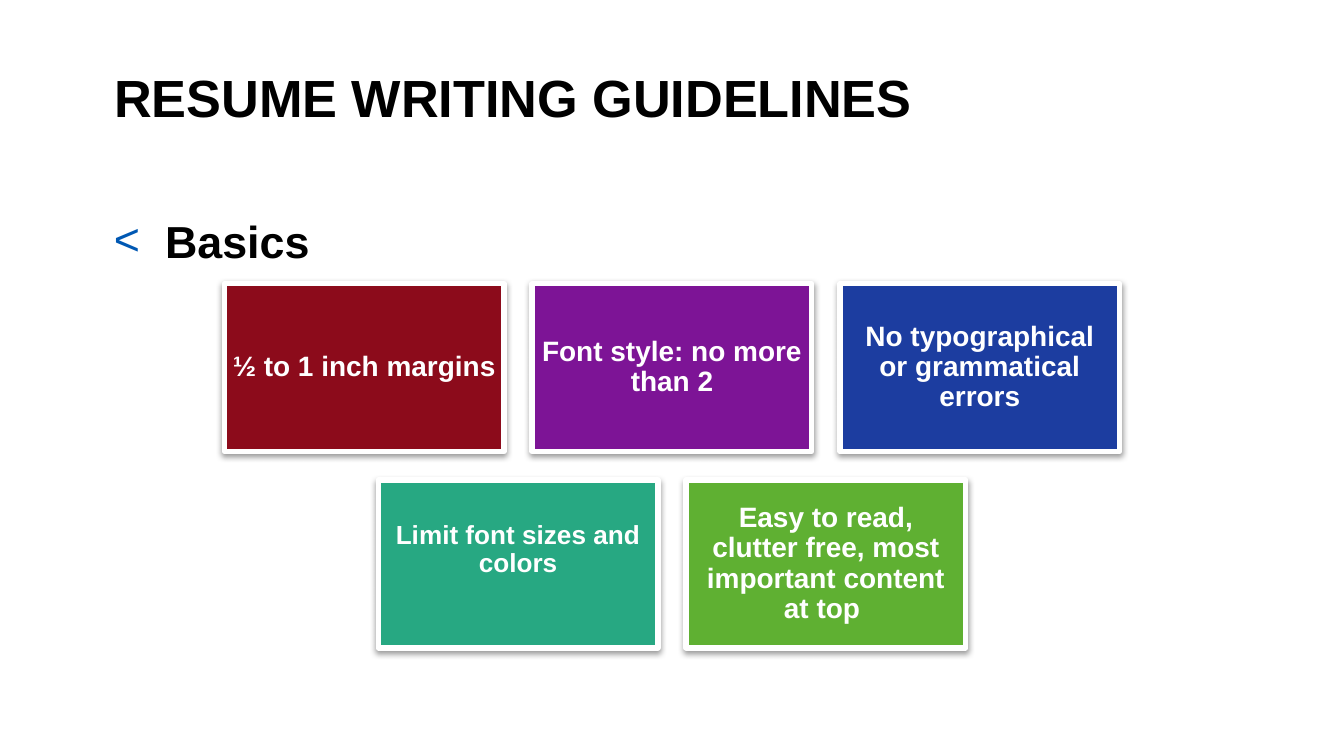
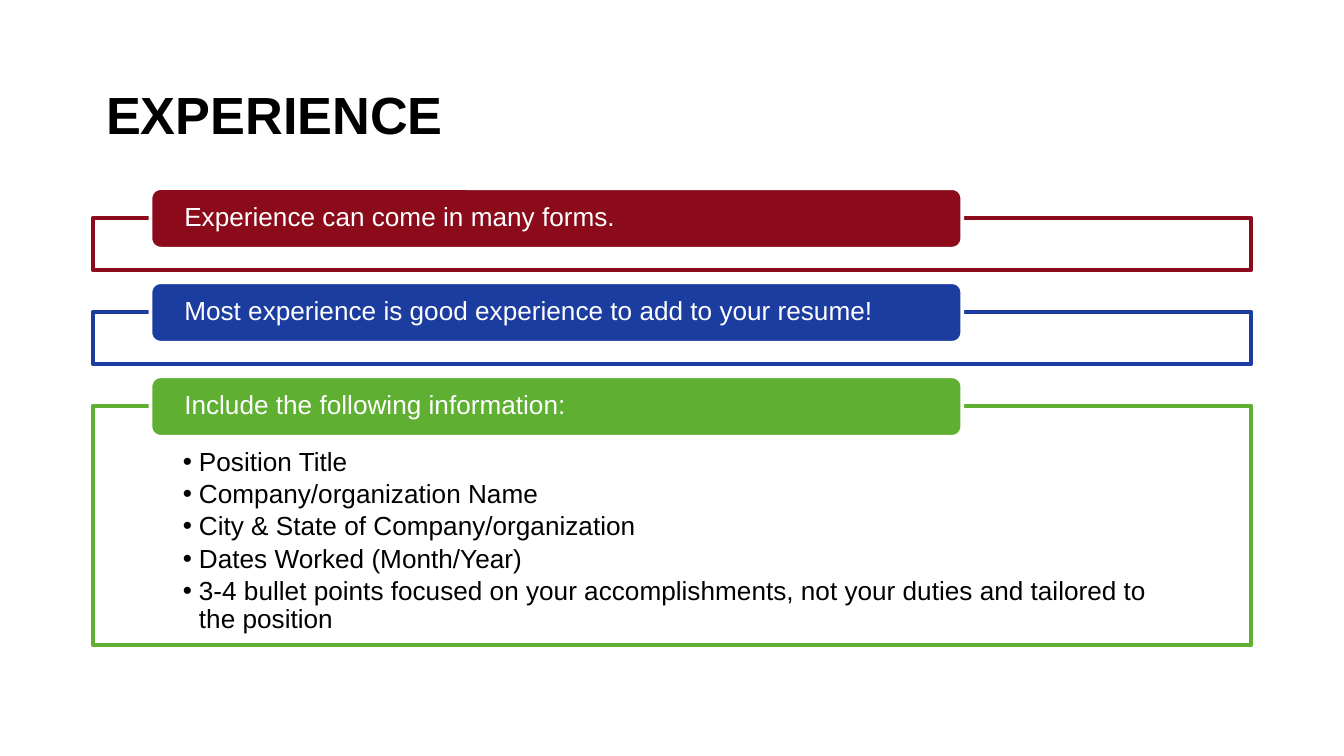
from lxml.etree import SubElement
from pptx import Presentation
from pptx.dml.color import RGBColor
from pptx.enum.shapes import MSO_SHAPE as Shape
from pptx.enum.text import MSO_ANCHOR as Anchor, MSO_AUTO_SIZE as AutoSize, PP_ALIGN as Align
from pptx.oxml.ns import qn
from pptx.util import Inches, Pt

COLORS = {
    "black": "000000", "white": "FFFFFF", "bullet": "0058B3", "red": "8C0B1B",
    "purple": "7D1496", "blue": "1C3DA0", "teal": "27A882", "green": "5FB032",
}
FONT = "Arial"


def rgb(name):
    return RGBColor.from_string(COLORS[name])


def add_bullet(paragraph, char, color, indent):
    props = paragraph._p.get_or_add_pPr()
    props.set("marL", str(Inches(indent)))
    props.set("indent", str(-Inches(indent)))
    bullet_color = SubElement(props, qn("a:buClr"))
    SubElement(bullet_color, qn("a:srgbClr"), val=COLORS[color])
    SubElement(props, qn("a:buFont"), typeface=FONT)
    SubElement(props, qn("a:buChar"), char=char)


def write(frame, *lines, size=14, color="white", bold=False, align=Align.LEFT,
          anchor=Anchor.MIDDLE, insets=(0.1, 0.05, 0.1, 0.05), spacing=0.9,
          space_before=0, bullet=None):
    """Fill a text frame with one paragraph per line; bullet is (char, color, indent)."""
    frame.word_wrap = True
    frame.auto_size = AutoSize.NONE
    frame.vertical_anchor = anchor
    (frame.margin_left, frame.margin_top,
     frame.margin_right, frame.margin_bottom) = map(Inches, insets)
    for number, line in enumerate(lines):
        paragraph = frame.add_paragraph() if number else frame.paragraphs[0]
        if bullet:
            add_bullet(paragraph, *bullet)
        paragraph.alignment = align
        paragraph.line_spacing = spacing
        paragraph.space_before = Pt(space_before if number else 0)
        run = paragraph.add_run()
        run.text = line
        run.font.name, run.font.size, run.font.bold = FONT, Pt(size), bold
        run.font.color.rgb = rgb(color)


class Deck:
    def __init__(self):
        self.prs = Presentation()
        # Widescreen, 16:9
        self.prs.slide_width = Inches(10)
        self.prs.slide_height = Inches(10 * 9 / 16)
        self.slide = None

    def add_slide(self, title, *box):
        self.slide = self.prs.slides.add_slide(self.prs.slide_layouts[5])
        heading = self.slide.shapes.title
        heading.left, heading.top, heading.width, heading.height = map(Inches, box)
        write(heading.text_frame, title, size=28, color="black", bold=True, spacing=1.0)

    def text(self, box, *lines, **style):
        frame = self.slide.shapes.add_textbox(*map(Inches, box)).text_frame
        write(frame, *lines, **style)

    def block(self, kind, box, fill, line, width):
        shape = self.slide.shapes.add_shape(kind, *map(Inches, box))
        shape.shadow.inherit = False
        shape.fill.solid()
        shape.fill.fore_color.rgb = rgb(fill)
        shape.line.color.rgb = rgb(line)
        shape.line.width = Pt(width)
        return shape

    def card(self, box, label, fill, size=15, bottom=0.06):
        card = self.block(Shape.RECTANGLE, box, fill, "white", 3)
        effects = card._element.spPr.find(qn("a:effectLst"))
        shadow = SubElement(effects, qn("a:outerShdw"), blurRad=str(Pt(3.1)),
                            dist=str(Pt(1.6)), dir="5400000", rotWithShape="0")
        shade = SubElement(shadow, qn("a:srgbClr"), val=COLORS["black"])
        SubElement(shade, qn("a:alpha"), val="38000")
        write(card.text_frame, label, size=size, bold=True, align=Align.CENTER,
              insets=(0.06, 0.06, 0.06, bottom))

    def panel(self, top, height, label, color, details=()):
        frame = self.block(Shape.RECTANGLE, (0.69, top, 8.62, height), "white", color, 2)
        fill_color = frame._element.spPr.find(qn("a:solidFill"))[0]
        SubElement(fill_color, qn("a:alpha"), val="90000")
        if details:
            write(frame.text_frame, *details, color="black", anchor=Anchor.TOP,
                  insets=(0.67, 0.32, 0.67, 0.11), space_before=2.1,
                  bullet=("•", "black", 0.12))
        tab = self.block(Shape.ROUNDED_RECTANGLE, (1.12, top - 0.22, 6.04, 0.45),
                         color, "white", 2)
        write(tab.text_frame, label, insets=(0.23, 0, 0.23, 0))


def build_guidelines(deck):
    deck.add_slide("RESUME WRITING GUIDELINES", 0.75, 0.25, 8.5, 0.94)
    deck.text((0.75, 1.38, 8.5, 1.72), "Basics", size=24, color="black", bold=True,
              anchor=Anchor.TOP, spacing=1.4, bullet=("<", "bullet", 0.38))

    # Rows of cards, each centred on the slide
    width, height, gap = 2.08, 1.25, 0.21
    card_rows = [
        [("½ to 1 inch margins", "red", {}),
         ("Font style: no more than 2", "purple", {}),
         ("No typographical or grammatical errors", "blue", {})],
        [("Limit font sizes and colors", "teal", {"size": 14, "bottom": 0.27}),
         ("Easy to read, clutter free, most important content at top ", "green", {})],
    ]
    for row, cards in enumerate(card_rows):
        left = 5 - (len(cards) * (width + gap) - gap) / 2
        top = 2.11 + row * (height + gap)
        for column, (label, fill, style) in enumerate(cards):
            deck.card((left + column * (width + gap), top, width, height),
                      label, fill, **style)


def build_experience(deck):
    deck.add_slide("EXPERIENCE", 0.69, 0.3, 8.62, 1.09)

    # Stacked panels with a tab on each upper edge
    required_details = [
        "Position Title",
        "Company/organization Name",
        "City & State of Company/organization",
        "Dates Worked (Month/Year)",
        "3-4 bullet points focused on your accomplishments, not your duties "
        "and tailored to the position",
    ]
    panels = [
        (0.39, "Experience can come in many forms.", "red", ()),
        (0.39, "Most experience is good experience to add to your resume!", "blue", ()),
        (1.78, "Include the following information:", "green", required_details),
    ]
    top = 1.62
    for height, label, color, details in panels:
        deck.panel(top, height, label, color, details)
        top += height + 0.31


def main():
    deck = Deck()
    build_guidelines(deck)
    build_experience(deck)
    deck.prs.save("out.pptx")


if __name__ == "__main__":
    main()
